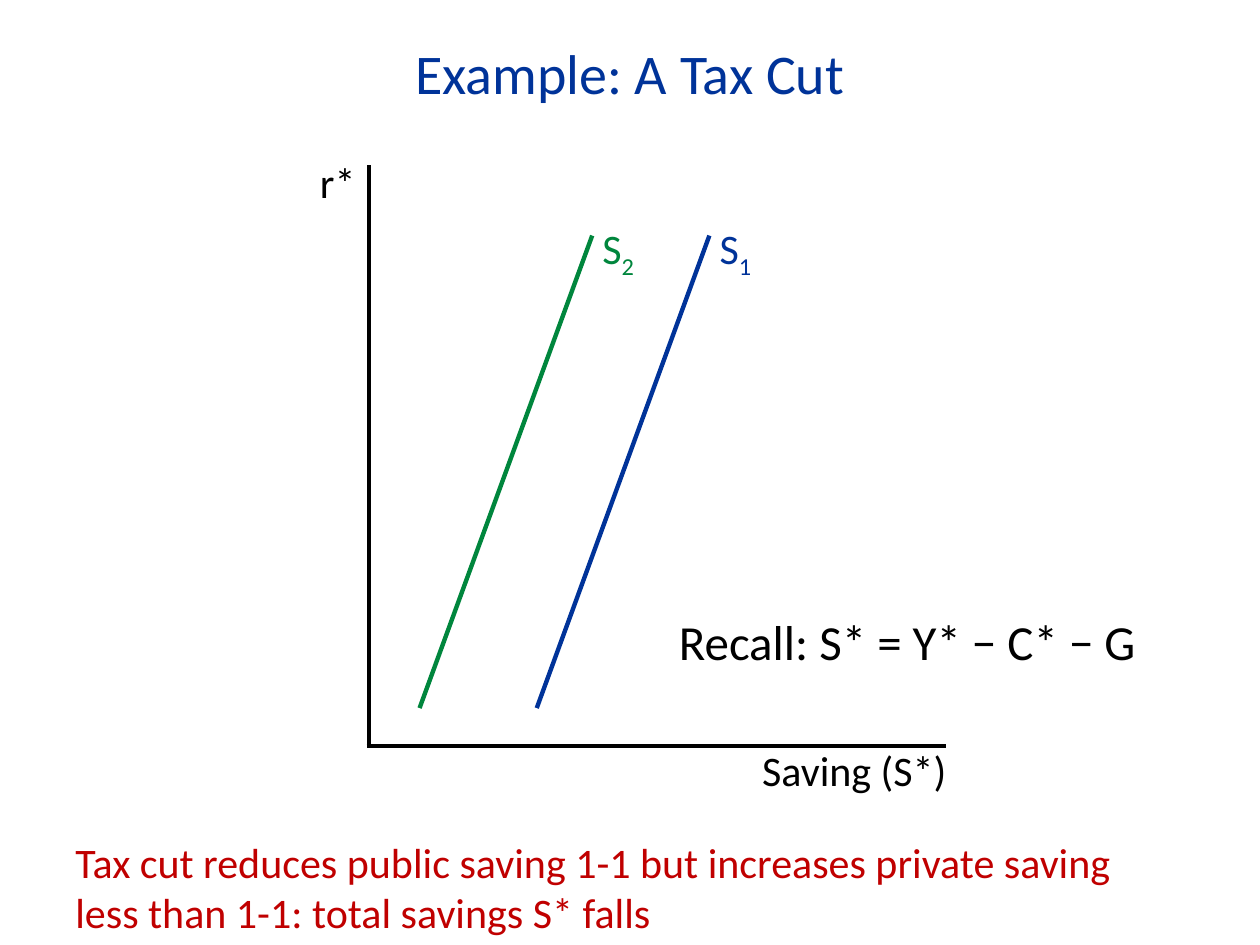
from lxml import etree
from pptx import Presentation
from pptx.dml.color import RGBColor
from pptx.enum.shapes import MSO_CONNECTOR
from pptx.enum.text import MSO_ANCHOR, MSO_AUTO_SIZE, PP_ALIGN
from pptx.oxml.ns import qn
from pptx.util import Inches, Pt

STRAIGHT = MSO_CONNECTOR.STRAIGHT
TOP, MIDDLE = MSO_ANCHOR.TOP, MSO_ANCHOR.MIDDLE
LEFT, CENTER, RIGHT = PP_ALIGN.LEFT, PP_ALIGN.CENTER, PP_ALIGN.RIGHT
GROW = MSO_AUTO_SIZE.SHAPE_TO_FIT_TEXT

COLORS = {"ink": "000000", "blue": "003399", "green": "00863D", "red": "C00000"}
COLUMNS, ROWS = 100, 75
CELL = Inches(10) / COLUMNS


def grid(*cells):
    return [round(c * CELL) for c in cells]


def add_text(s, box, lines, size, color, align=LEFT, anchor=TOP, subscript=""):
    tf = s.shapes.add_textbox(*grid(*box)).text_frame
    frame = {"word_wrap": True, "auto_size": GROW, "vertical_anchor": anchor}
    for name, value in frame.items():
        setattr(tf, name, value)
    for i, line in enumerate(lines):
        p = tf.add_paragraph() if i else tf.paragraphs[0]
        p.alignment = align
        for text in filter(None, (line, subscript)):
            r = p.add_run()
            r.text = text
            for name, value in {"name": "Calibri", "size": Pt(size)}.items():
                setattr(r.font, name, value)
            r.font.color.rgb = RGBColor.from_string(COLORS[color])
        if subscript:
            r.font._element.set("baseline", "-25000")


def add_line(s, start, end, color):
    line = s.shapes.add_connector(STRAIGHT, *grid(*start, *end))
    line.line.width = Pt(2.5)
    line.line.color.rgb = RGBColor.from_string(COLORS[color])
    etree.SubElement(line._element.spPr, qn("a:effectLst"))


def add_title(s, box):
    add_text(s, box, ["Example: A Tax Cut"], 32, "blue", CENTER, MIDDLE)


def add_saving_curve(s, box, color, number):
    x, y, w, h = box
    add_line(s, (x, y + h), (x + w, y), color)
    add_text(s, (x + w - 1.5, y - 1.5, 5.8, 5), ["S"], 24, color, RIGHT,
             subscript=number)


def add_graph(s, box):
    x, y, w, h = box
    base = y + h
    add_line(s, (x - 0.2, base), (x + w, base), "ink")
    add_line(s, (x, y), (x, base), "ink")
    add_text(s, (x - 5.4, y - 1.2, 5.3, 5), ["r*"], 24, "ink", RIGHT)
    add_text(s, (x + w - 18.8, base - 0.6, 19.8, 5), ["Saving (S*)"], 24, "ink", RIGHT)
    for offset, color, number in ((13.3, "blue", "1"), (4, "green", "2")):
        add_saving_curve(s, (x + offset, y + 5.6, 13.7, 37.5), color, number)


def add_recall(s, box):
    add_text(s, box, ["Recall: S* = Y* − C* − G"], 28, "ink", anchor=MIDDLE)


def add_conclusion(s, box):
    lines = ["Tax cut reduces public saving 1-1 but increases private saving",
             "less than 1-1: total savings S* falls"]
    add_text(s, box, lines, 24, "red")


def main():
    prs = Presentation()
    prs.slide_width, prs.slide_height = grid(COLUMNS, ROWS)
    s = prs.slides.add_slide(prs.slide_layouts[6])
    add_title(s, (7, 2.5, 86, 6.4))
    add_graph(s, (29.3, 13.1, 45.8, 46.1))
    add_recall(s, (52.9, 48, 40.8, 5.8))
    add_conclusion(s, (5, 65.9, 85.7, 12.1))
    prs.save("out.pptx")


if __name__ == "__main__":
    main()
